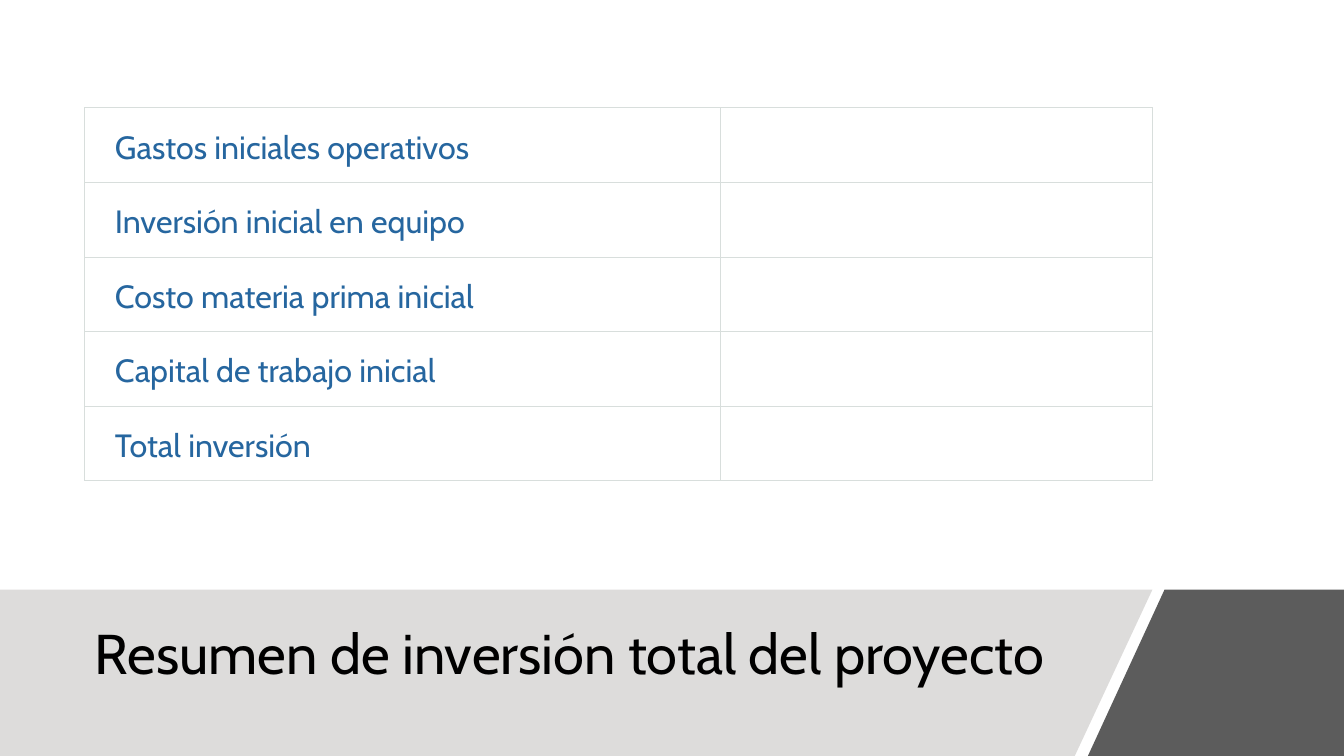
from dataclasses import dataclass

from lxml import etree
from pptx import Presentation
from pptx.dml.color import RGBColor
from pptx.enum.text import MSO_ANCHOR, PP_ALIGN
from pptx.oxml.ns import qn
from pptx.util import Pt

PX = 9144  # EMU in one px, 100 px to the inch
SLIDE_WIDTH, SLIDE_HEIGHT = 1333, 750
FONT = "Cabin"
COLORS = {
    "band": "DDDCDB",
    "corner": "404040",
    "title": "000000",
    "label": "26669F",
    "border": "D8DEDC",
}
BOTTOM, LEFT = MSO_ANCHOR.BOTTOM, PP_ALIGN.LEFT
BORDER_WIDTH = Pt(0.75)

BAND_TOP = 585
TABLE_LEFT, TABLE_TOP = 84, 107
COLUMN_WIDTHS = (631, 428)
ROW_HEIGHT = 74
ROW_LABELS = (
    "Gastos iniciales operativos",
    "Inversión inicial en equipo",
    "Costo materia prima inicial",
    "Capital de trabajo inicial",
    "Total inversión",
)


@dataclass(frozen=True)
class Panel:
    points: tuple[tuple[int, int], ...]
    color: str
    opacity: int = 100


PANELS = (
    Panel(((0, BAND_TOP), (1143, BAND_TOP), (1066, SLIDE_HEIGHT), (0, SLIDE_HEIGHT)), "band"),
    Panel(((1155, BAND_TOP), (SLIDE_WIDTH, BAND_TOP), (SLIDE_WIDTH, SLIDE_HEIGHT),
           (1079, SLIDE_HEIGHT)), "corner", opacity=85),
)


def px(length: int) -> int:
    return length * PX


def rgb(name: str) -> RGBColor:
    return RGBColor.from_string(COLORS[name])


def write_text(text_frame, text: str, *, size: int, color: str, line_spacing: float = 1.0) -> None:
    paragraph = text_frame.paragraphs[0]
    paragraph.alignment = LEFT
    paragraph.line_spacing = line_spacing
    run = paragraph.add_run()
    run.text = text
    run.font.name = FONT
    run.font.size = Pt(size)
    run.font.color.rgb = rgb(color)


def draw_panel(slide, panel: Panel) -> None:
    builder = slide.shapes.build_freeform(*panel.points[0], scale=PX)
    builder.add_line_segments(panel.points[1:], close=True)
    shape = builder.convert_to_shape()
    shape.shadow.inherit = False
    shape.line.fill.background()
    shape.fill.solid()
    shape.fill.fore_color.rgb = rgb(panel.color)
    if panel.opacity < 100:
        color_element = shape.fill._xPr.find(f".//{qn('a:srgbClr')}")
        etree.SubElement(color_element, qn("a:alpha"), val=str(panel.opacity * 1000))


def draw_title(slide, text: str) -> None:
    title = slide.shapes.title
    title.left, title.top, title.width, title.height = map(px, (84, 595, 995, 91))
    title.text_frame.word_wrap = True
    title.text_frame.vertical_anchor = BOTTOM
    write_text(title.text_frame, text, size=40, color="title", line_spacing=0.9)
    # Bring the title in front of the panels
    title.element.getparent().append(title.element)


def style_cell(cell) -> None:
    properties = cell._tc.get_or_add_tcPr()
    for side in ("lnL", "lnR", "lnT", "lnB"):
        line = etree.SubElement(properties, qn(f"a:{side}"), w=str(BORDER_WIDTH))
        fill = etree.SubElement(line, qn("a:solidFill"))
        etree.SubElement(fill, qn("a:srgbClr"), val=COLORS["border"])
    cell.fill.background()


def draw_table(slide) -> None:
    row_count = len(ROW_LABELS)
    table = slide.shapes.add_table(
        row_count, len(COLUMN_WIDTHS), px(TABLE_LEFT), px(TABLE_TOP),
        px(sum(COLUMN_WIDTHS)), px(row_count * ROW_HEIGHT),
    ).table
    table.first_row = False
    table.horz_banding = False
    for column, width in zip(table.columns, COLUMN_WIDTHS):
        column.width = px(width)
    for row, label in zip(table.rows, ROW_LABELS):
        row.height = px(ROW_HEIGHT)
        for cell in row.cells:
            style_cell(cell)
        label_cell = row.cells[0]
        label_cell.vertical_anchor = BOTTOM
        label_cell.margin_left, label_cell.margin_right = px(30), 0
        label_cell.margin_top = label_cell.margin_bottom = px(15)
        write_text(label_cell.text_frame, label, size=23, color="label")


def main() -> None:
    presentation = Presentation()
    presentation.slide_width = px(SLIDE_WIDTH)
    presentation.slide_height = px(SLIDE_HEIGHT)
    slide = presentation.slides.add_slide(presentation.slide_layouts.get_by_name("Title Only"))

    # Bottom band and its dark corner
    for panel in PANELS:
        draw_panel(slide, panel)

    # Title on the band
    draw_title(slide, "Resumen de inversión total del proyecto")

    # Investment summary
    draw_table(slide)

    presentation.save("out.pptx")


if __name__ == "__main__":
    main()
